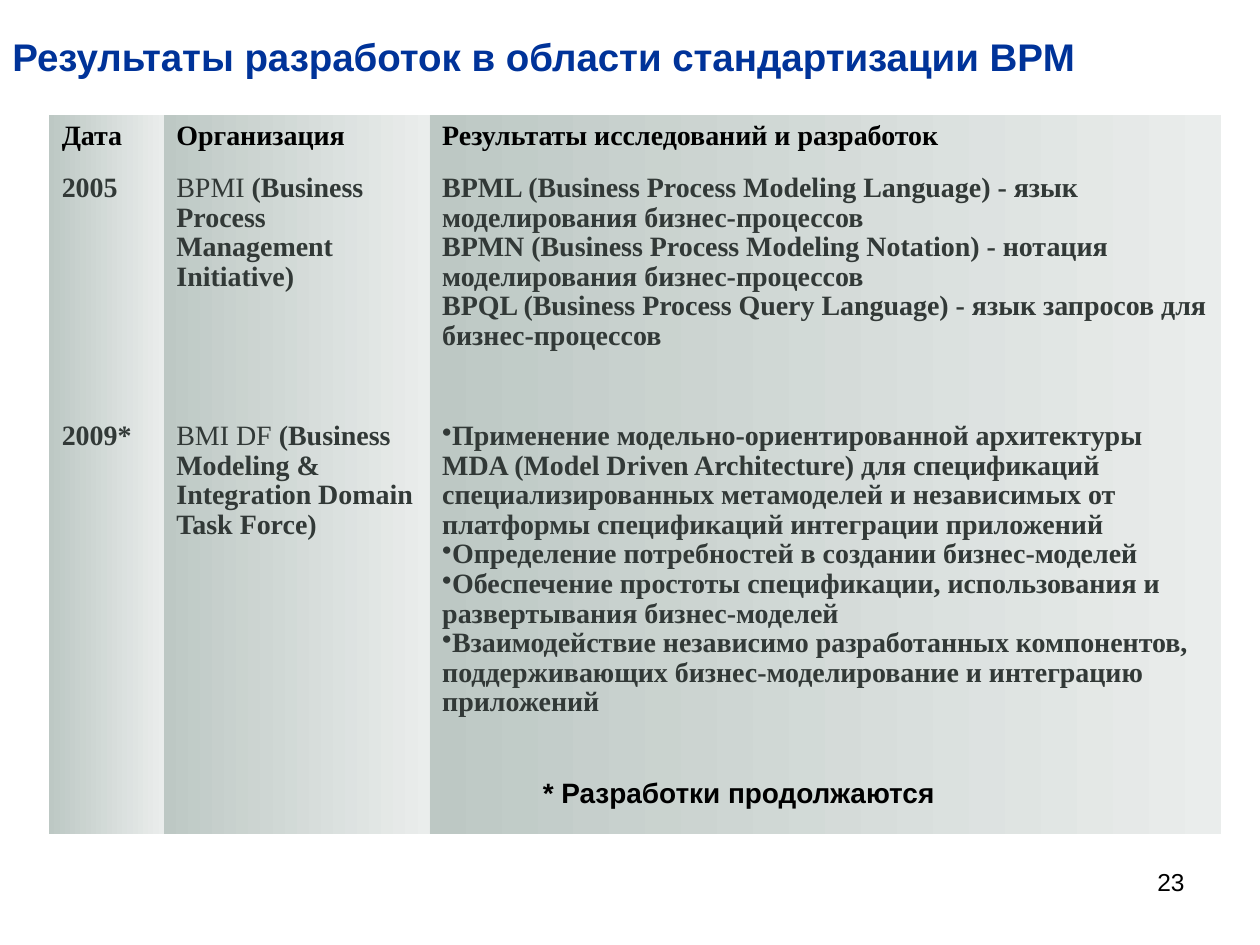
from pptx import Presentation
from pptx.util import Inches, Pt
from pptx.dml.color import RGBColor
from pptx.enum.text import PP_ALIGN
from pptx.oxml.ns import qn
from lxml.etree import SubElement

THEME = {
    "title": RGBColor(0x00, 0x33, 0x99),
    "black": RGBColor(0x00, 0x00, 0x00),
    "body": RGBColor(0x32, 0x39, 0x37),
    "dark": RGBColor(0xBD, 0xC8, 0xC4),
    "light": RGBColor(0xEA, 0xED, 0xEC),
    "sans": "Arial",
    "serif": "Times New Roman",
    "title_size": Pt(22),
    "text_size": Pt(16),
    "number_size": Pt(14),
}
NO_STYLE = "{2D5ABB26-0587-4C30-8999-92F81FD0307C}"


def add_run(p, text, font, size, color, bold=True):
    r = p.add_run()
    r.text = text
    r.font.name = font
    r.font.size = THEME[size]
    r.font.color.rgb = THEME[color]
    r.font.bold = bold


def add_label(box, text, size, color, bold, wrap):
    tf = s.shapes.add_textbox(*[Inches(v) for v in box]).text_frame
    tf.word_wrap = wrap
    p = tf.paragraphs[0]
    add_run(p, text, THEME["sans"], size, color, bold)
    return p


prs = Presentation()
prs.slide_width = Inches(10)
prs.slide_height = Inches(7.5)
s = prs.slides.add_slide(prs.slide_layouts[6])

number = add_label((7.17, 6.83, 2.33, 0.52), "23", "number_size", "black", False, True)
number.alignment = PP_ALIGN.RIGHT
add_label((0, 0.21, 9.31, 0.65), "Результаты разработок в области стандартизации BPM",
          "title_size", "title", True, True)

col_widths = [0.91, 2.11, 6.28]
row_heights = [0.41, 1.97, 3.33]
rows = [
    [["Дата"], ["Организация"], ["Результаты исследований и разработок"]],
    [
        ["2005"],
        [("BPMI", " (Business Process Management Initiative)")],
        [
            "BPML (Business Process Modeling Language) - язык моделирования бизнес-процессов",
            "BPMN (Business Process Modeling Notation) - нотация моделирования бизнес-процессов",
            "BPQL (Business Process Query Language) - язык запросов для бизнес-процессов",
        ],
    ],
    [
        ["2009*"],
        [("BMI DF ", "(Business Modeling & Integration Domain Task Force)")],
        [
            "Применение модельно-ориентированной архитектуры MDA (Model Driven Architecture) "
            "для спецификаций специализированных метамоделей и независимых от платформы "
            "спецификаций интеграции приложений",
            "Определение потребностей в создании бизнес-моделей",
            "Обеспечение простоты спецификации, использования и развертывания бизнес-моделей",
            "Взаимодействие независимо разработанных компонентов, поддерживающих "
            "бизнес-моделирование и интеграцию приложений",
        ],
    ],
]

frame = s.shapes.add_table(len(rows), len(col_widths), Inches(0.39), Inches(0.91),
                           Inches(sum(col_widths)), Inches(sum(row_heights)))
table = frame.table
table.first_row = False
table.horz_banding = False
table._tbl.tblPr.find(qn("a:tableStyleId")).text = NO_STYLE
for col, width in zip(table.columns, col_widths):
    col.width = Inches(width)
for row, height in zip(table.rows, row_heights):
    row.height = Inches(height)

for i, row in enumerate(rows):
    for j, paragraphs in enumerate(row):
        cell = table.cell(i, j)
        cell.margin_left = cell.margin_right = Inches(0.1)
        cell.margin_top = Inches(0.06)
        cell.margin_bottom = Inches(0.05)
        cell.fill.gradient()
        cell.fill.gradient_angle = 0
        for stop, color in zip(cell.fill.gradient_stops, ("dark", "light")):
            stop.color.rgb = THEME[color]
        tf = cell.text_frame
        for k, content in enumerate(paragraphs):
            p = tf.add_paragraph() if k else tf.paragraphs[0]
            if (i, j) == (2, 2):
                pPr = p._p.get_or_add_pPr()
                SubElement(pPr, qn("a:buChar"), char="•")
            p.line_spacing = 0.95
            runs = content if isinstance(content, tuple) else (content,)
            for n, text in enumerate(runs):
                add_run(p, text, THEME["serif"], "text_size",
                        "body" if i else "black", n == len(runs) - 1)

note = add_label((4.21, 6.11, 3.35, 0.37), "* Разработки продолжаются",
                 "text_size", "black", True, False)
note.space_after = Pt(10)

prs.save("out.pptx")
